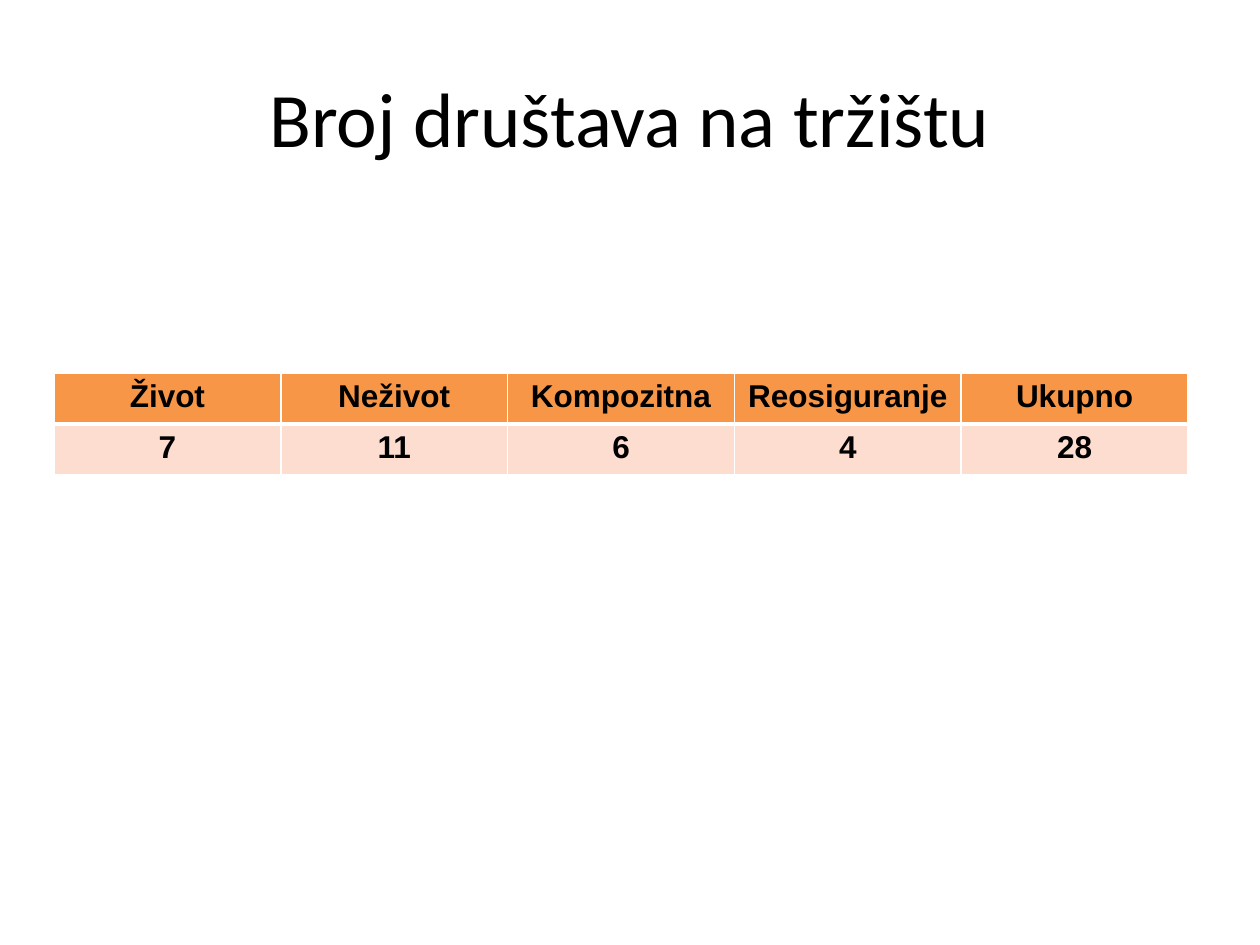
from lxml import etree
from pptx import Presentation
from pptx.dml.color import RGBColor
from pptx.enum import text
from pptx.oxml import ns
from pptx.util import Pt

PX = 914400 / 126
COLORS = {"text": "000000", "header": "F79646", "body": "FCDDCF", "border": "FFFFFF"}
TITLE_FONT = {"name": "Calibri", "size": Pt(44), "bold": False}
CELL_FONT = {"name": "Arial", "size": Pt(18), "bold": True}
ROWS = [
    ("header", ["Život", "Neživot", "Kompozitna", "Reosiguranje", "Ukupno"], {"L": 1, "R": 1, "T": 1, "B": 3}),
    ("body", ["7", "11", "6", "4", "28"], {"L": 1, "R": 1, "T": 3, "B": 1}),
]


def px(*lengths):
    return [round(n * PX) for n in lengths]


def write(tf, content, font):
    p = tf.paragraphs[0]
    p.alignment = text.PP_ALIGN.CENTER
    r = p.add_run()
    r.text = content
    for name, value in font.items():
        setattr(r.font, name, value)
    r.font.color.rgb = RGBColor.from_string(COLORS["text"])


prs = Presentation()
prs.slide_width, prs.slide_height = px(1260, 945)
s = prs.slides.add_slide(prs.slide_layouts[6])

tf = s.shapes.add_textbox(*px(63, 38, 1134, 157)).text_frame
tf.word_wrap = True
tf.vertical_anchor = text.MSO_ANCHOR.MIDDLE
write(tf, "Broj društava na tržištu", TITLE_FONT)

table = s.shapes.add_table(len(ROWS), len(ROWS[0][1]), *px(54, 373, 1134, 102)).table
for i, (fill, values, borders) in enumerate(ROWS):
    for j, value in enumerate(values):
        cell = table.cell(i, j)
        write(cell.text_frame, value, CELL_FONT)
        tcPr = cell._tc.get_or_add_tcPr()
        for side, width in borders.items():
            ln = etree.SubElement(tcPr, ns.qn(f"a:ln{side}"), w=str(Pt(width)))
            solid = etree.SubElement(ln, ns.qn("a:solidFill"))
            etree.SubElement(solid, ns.qn("a:srgbClr"), val=COLORS["border"])
        cell.fill.solid()
        cell.fill.fore_color.rgb = RGBColor.from_string(COLORS[fill])

prs.save("out.pptx")
